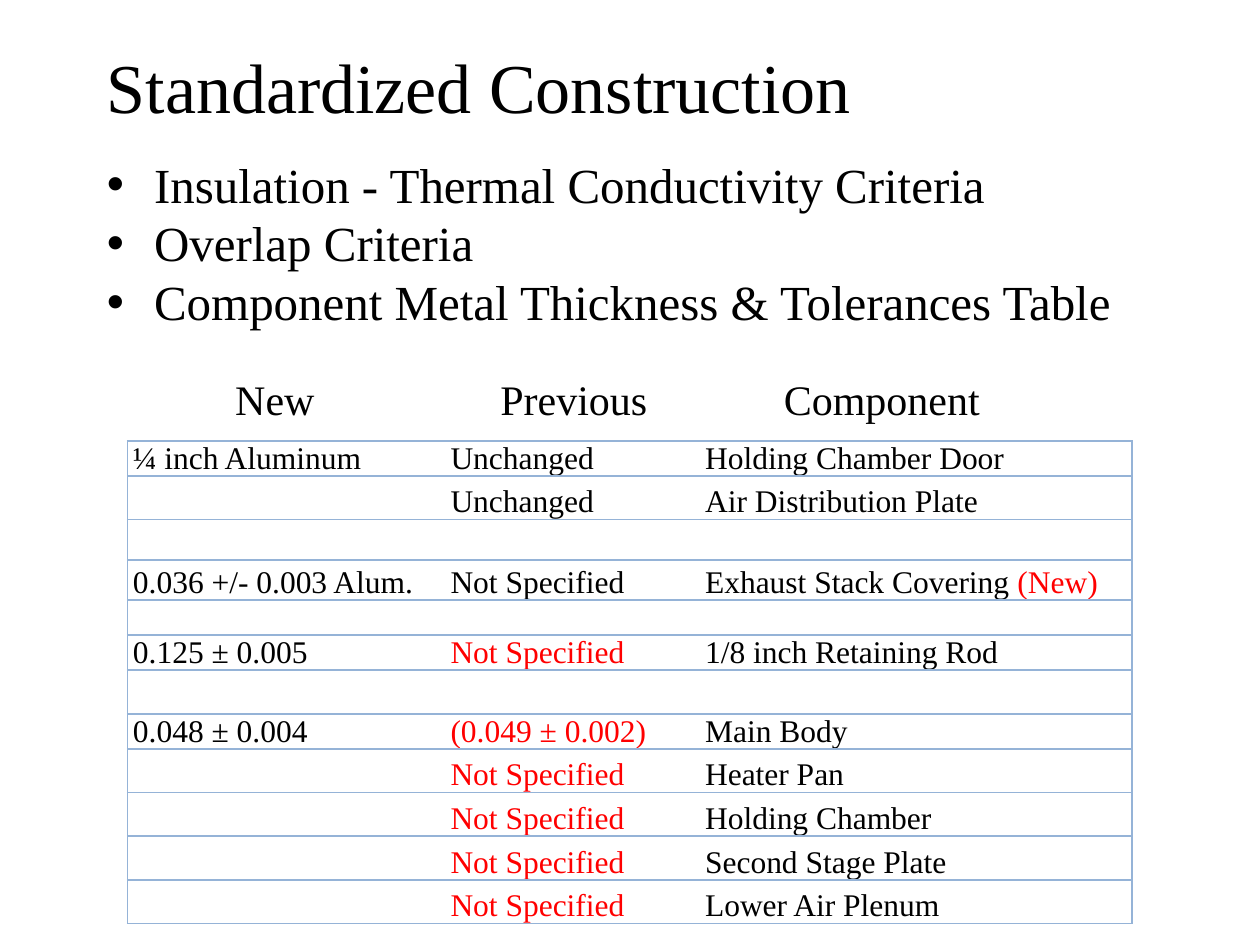
from lxml.etree import SubElement
from pptx import Presentation
from pptx.dml.color import RGBColor
from pptx.enum.text import MSO_ANCHOR
from pptx.oxml import parse_xml
from pptx.oxml.ns import nsdecls, qn
from pptx.util import Pt

FONT = "Times New Roman"
BLACK, RED, BLUE = "000000", "FF0000", "95B3D7"
UNSET = "Not Specified"

WIDTHS = (181.5, 145.5, 247)
# Row height, then new, previous and component; a tuple is (text, colour).
ROWS = (
    (20, "¼ inch Aluminum", "Unchanged", "Holding Chamber Door"),
    (25, "", "Unchanged", "Air Distribution Plate"),
    (23, "", "", ""),
    (23, "0.036 +/- 0.003 Alum.", UNSET,
     ("Exhaust Stack Covering ", BLACK), ("(New)", RED)),
    (20, "", "", ""),
    (20, "0.125 ± 0.005", (UNSET, RED), "1/8 inch Retaining Rod"),
    (25, "", "", ""),
    (20, "0.048 ± 0.004", ("(0.049 ± 0.002)", RED), "Main Body"),
    (25, "", (UNSET, RED), "Heater Pan"),
    (25, "", (UNSET, RED), "Holding Chamber"),
    (25, "", (UNSET, RED), "Second Stage Plate"),
    (25, "", (UNSET, RED), "Lower Air Plenum"),
)


def tint(code):
    return RGBColor.from_string(code)


def add_run(para, text, size=18, color=BLACK):
    run = para.add_run()
    run.text = text
    run.font.name = FONT
    run.font.size = Pt(size)
    run.font.color.rgb = tint(color)


def add_text(slide, box, lines, size, anchor=MSO_ANCHOR.MIDDLE, inset=7.2,
             bullet=False, tabs=()):
    frame = slide.shapes.add_textbox(*map(Pt, box)).text_frame
    frame.word_wrap = True
    frame.vertical_anchor = anchor
    frame.margin_left = Pt(inset)
    for i, line in enumerate(lines):
        para = frame.paragraphs[0] if i == 0 else frame.add_paragraph()
        props = para._p.get_or_add_pPr()
        if bullet:
            props.set("marL", str(Pt(27)))
            props.set("indent", str(-Pt(27)))
            SubElement(props, qn("a:buFont"), typeface="Arial")
            SubElement(props, qn("a:buChar"), char="•")
        if tabs:
            stops = SubElement(props, qn("a:tabLst"))
            for stop in tabs:
                SubElement(stops, qn("a:tab"), pos=str(Pt(stop)), algn="l")
        add_run(para, line, size)


def set_edges(cell, sides):
    """Draw blue lines on the named sides (of L, R, T, B) and none on the rest."""
    props = cell._tc.get_or_add_tcPr()
    for i, side in enumerate("LRTB"):
        fill = (f'<a:solidFill><a:srgbClr val="{BLUE}"/></a:solidFill>'
                if side in sides else "<a:noFill/>")
        props.insert(i, parse_xml(
            f'<a:ln{side} {nsdecls("a")} w="{Pt(1)}">{fill}</a:ln{side}>'))


def fill_cell(cell, parts, sides):
    cell.fill.background()
    cell.vertical_anchor = MSO_ANCHOR.BOTTOM
    cell.margin_left = cell.margin_right = Pt(3)
    cell.margin_top, cell.margin_bottom = Pt(0.7), Pt(0)
    para = cell.text_frame.paragraphs[0]
    if len(parts) == 1 and parts[0] != UNSET:
        para.line_spacing = Pt(17.4)
    for part in parts:
        text, color = (part, BLACK) if isinstance(part, str) else part
        if text:
            add_run(para, text, color=color)
        else:
            # A small end mark keeps an empty row at its own height.
            SubElement(para._p, qn("a:endParaRPr"), sz="1200")
    set_edges(cell, sides)


def add_grid(slide, left, top):
    high = sum(row[0] for row in ROWS)
    table = slide.shapes.add_table(
        len(ROWS), len(WIDTHS), Pt(left), Pt(top), Pt(sum(WIDTHS)), Pt(high)).table
    table.first_row = table.horz_banding = False
    for col, width in zip(table.columns, WIDTHS):
        col.width = Pt(width)
    for r, (height, new, prior, *part) in enumerate(ROWS):
        table.rows[r].height = Pt(height)
        for c, parts in enumerate(([new], [prior], part)):
            fill_cell(table.cell(r, c), parts, ("LTB", "TB", "RTB")[c])


def main():
    deck = Presentation()
    deck.slide_width, deck.slide_height = Pt(720), Pt(540)
    slide = deck.slides.add_slide(deck.slide_layouts[6])
    add_grid(slide, 73, 252)
    add_text(slide, (54, 84, 606, 109), (
        "Insulation - Thermal Conductivity Criteria",
        "Overlap Criteria",
        "Component Metal Thickness & Tolerances Table",
    ), 28, bullet=True)
    add_text(slide, (54, 18, 612, 62), ["Standardized Construction"], 40)
    add_text(slide, (111, 210, 534, 36), ["New\tPrevious\tComponent"], 24,
             anchor=MSO_ANCHOR.TOP, inset=23.4, tabs=(151.5, 313.5))
    deck.save("out.pptx")


if __name__ == "__main__":
    main()
